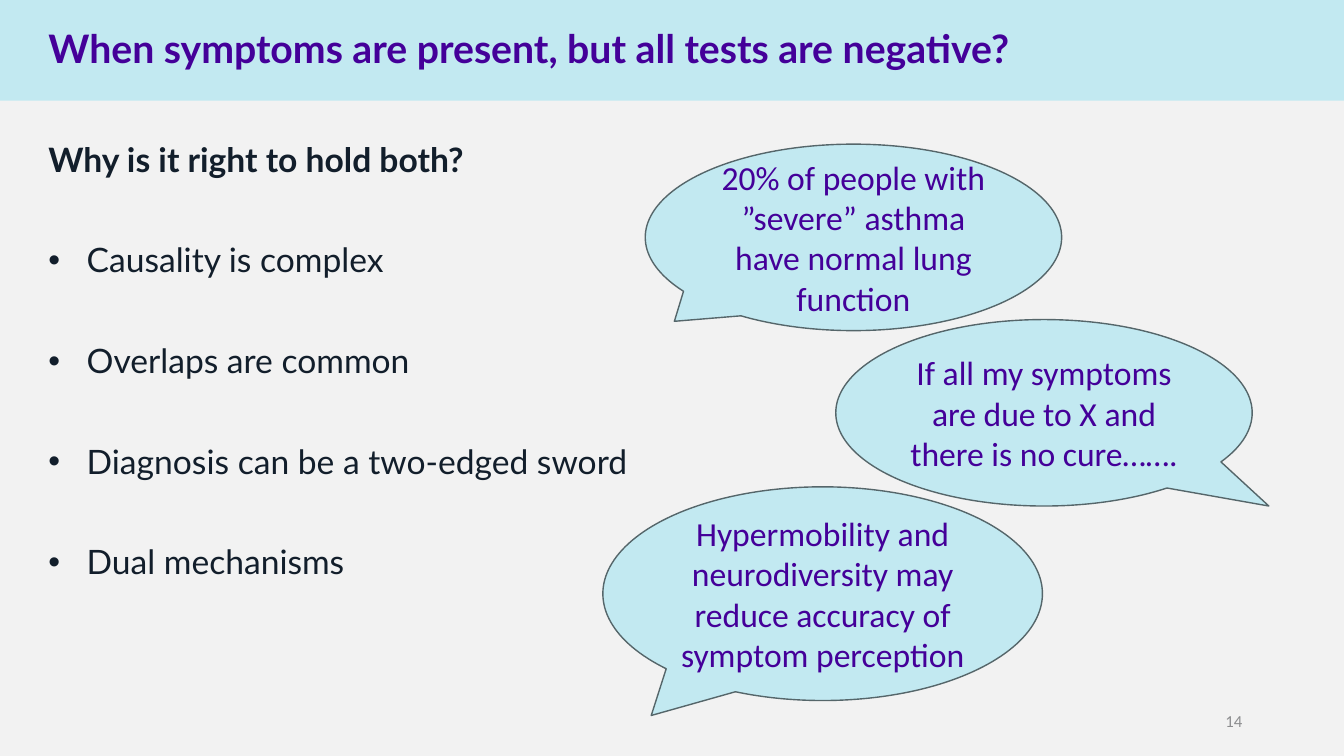
from dataclasses import dataclass

from lxml import etree
from pptx import Presentation
from pptx.dml.color import RGBColor
from pptx.enum.shapes import MSO_SHAPE
from pptx.enum.text import MSO_ANCHOR, MSO_AUTO_SIZE, PP_ALIGN
from pptx.oxml.ns import qn
from pptx.util import Inches, Pt

RECT = MSO_SHAPE.RECTANGLE
BUBBLE = MSO_SHAPE.OVAL_CALLOUT
MIDDLE, TOP = MSO_ANCHOR.MIDDLE, MSO_ANCHOR.TOP
LEFT, CENTER, RIGHT = PP_ALIGN.LEFT, PP_ALIGN.CENTER, PP_ALIGN.RIGHT
FIXED = MSO_AUTO_SIZE.NONE


@dataclass(frozen=True)
class Theme:
    """Colours, fonts and type sizes of the slide."""
    back: str = "F2F2F2"
    pale: str = "C2E9F1"
    purple: str = "440099"
    ink: str = "121E2B"
    edge: str = "55666A"
    gray: str = "8C8D8F"
    head: str = "Lato"
    talk: str = "Calibri"
    title: int = 28
    text: int = 24
    small: int = 12


THEME = Theme()
WIDE, HIGH = 13.33, 7.5
MARGIN = 0.38
TITLE = "When symptoms are present, but all tests are negative?"
QUERY = "Why is it right to hold both?"
POINTS = ["Causality is complex", "Overlaps are common",
          "Diagnosis can be a two-edged sword", "Dual mechanisms"]
QUOTES = [
    ((6.4, 1.43, 4.13, 1.85), (-0.43, 0.45),
     "20% of people with ”severe” asthma have normal lung function"),
    ((8.29, 3.17, 4.13, 1.85), (0.54, 0.5),
     "If all my symptoms are due to X and there is no cure……."),
    ((5.98, 4.83, 4.36, 2.12), (-0.39, 0.57),
     "Hypermobility and neurodiversity may reduce accuracy of symptom perception"),
]


def color(code):
    """Turn a hex code into a colour."""
    return RGBColor.from_string(code)


def place(shape, box):
    """Move a shape to a box given in inches."""
    shape.left, shape.top, shape.width, shape.height = map(Inches, box)


def frame(shape, anchor):
    """Prepare a wrapped text frame of fixed size."""
    text = shape.text_frame
    text.word_wrap = True
    text.auto_size = FIXED
    text.vertical_anchor = anchor
    return text


def write(para, words, face, size, ink, bold=False, align=LEFT):
    """Add one formatted run to a paragraph."""
    para.alignment = align
    run = para.add_run()
    run.text = words
    font = run.font
    font.name, font.size, font.bold = face, Pt(size), bold
    font.color.rgb = color(ink)


def indent(para, size, mark=None):
    """Set the hanging indent and the bullet of a paragraph."""
    props = para._p.get_or_add_pPr()
    props.set("marL", str(Inches(size)))
    props.set("indent", str(-Inches(size)))
    if mark:
        etree.SubElement(props, qn("a:buFont")).set("typeface", "Arial")
        etree.SubElement(props, qn("a:buChar")).set("char", mark)
    else:
        etree.SubElement(props, qn("a:buNone"))


def solid(slide, kind, box, fill, edge=None):
    """Add a flat shape with an optional outline."""
    shape = slide.shapes.add_shape(kind, *map(Inches, box))
    shape.shadow.inherit = False
    shape.fill.solid()
    shape.fill.fore_color.rgb = color(fill)
    if edge:
        shape.line.color.rgb = color(edge)
        shape.line.width = Pt(1)
    else:
        shape.line.fill.background()
    return shape


def header(slide, box):
    """Draw the title band and its title."""
    left, top, wide, high = box
    band = solid(slide, RECT, box, THEME.pale)
    title = slide.shapes.title
    title.element.addprevious(band.element)
    place(title, (left + MARGIN, top + 0.27 * high, 12.04, 0.47 * high))
    text = frame(title, MIDDLE)
    text.margin_top = text.margin_bottom = 0
    para = text.paragraphs[0]
    para.line_spacing = 0.9
    write(para, TITLE, THEME.head, THEME.title, THEME.purple, True)


def points(slide, box):
    """Fill the body with a question and its bullets."""
    body = slide.placeholders[1]
    place(body, box)
    text = frame(body, TOP)
    for row, words in enumerate([QUERY] + POINTS):
        para = text.add_paragraph() if row else text.paragraphs[0]
        para.line_spacing = 0.9
        para.space_before = Pt(46 if row else 0)
        indent(para, MARGIN if row else 0, "•" if row else None)
        write(para, words, THEME.head, THEME.text, THEME.ink, not row)


def quote(slide, box, tail, words):
    """Draw a speech bubble around a quote."""
    shape = solid(slide, BUBBLE, box, THEME.pale, THEME.edge)
    for spot, share in enumerate(tail):
        shape.adjustments[spot] = share
    para = frame(shape, MIDDLE).paragraphs[0]
    write(para, words, THEME.talk, THEME.text, THEME.purple, align=CENTER)


def number(slide, box):
    """Write the slide number."""
    text = frame(slide.shapes.add_textbox(*map(Inches, box)), MIDDLE)
    write(text.paragraphs[0], "14", THEME.talk, THEME.small, THEME.gray,
          align=RIGHT)


def main():
    """Build and save the slide."""
    deck = Presentation()
    deck.slide_width, deck.slide_height = Inches(WIDE), Inches(HIGH)
    slide = deck.slides.add_slide(deck.slide_layouts[1])
    slide.background.fill.solid()
    slide.background.fill.fore_color.rgb = color(THEME.back)
    header(slide, (0, 0, WIDE, 1))
    points(slide, (MARGIN, 1.37, 6, 5.31))
    number(slide, (9.42, 6.95, 3, 0.4))
    for box, tail, words in QUOTES:
        quote(slide, box, tail, words)
    deck.save("out.pptx")


if __name__ == "__main__":
    main()
